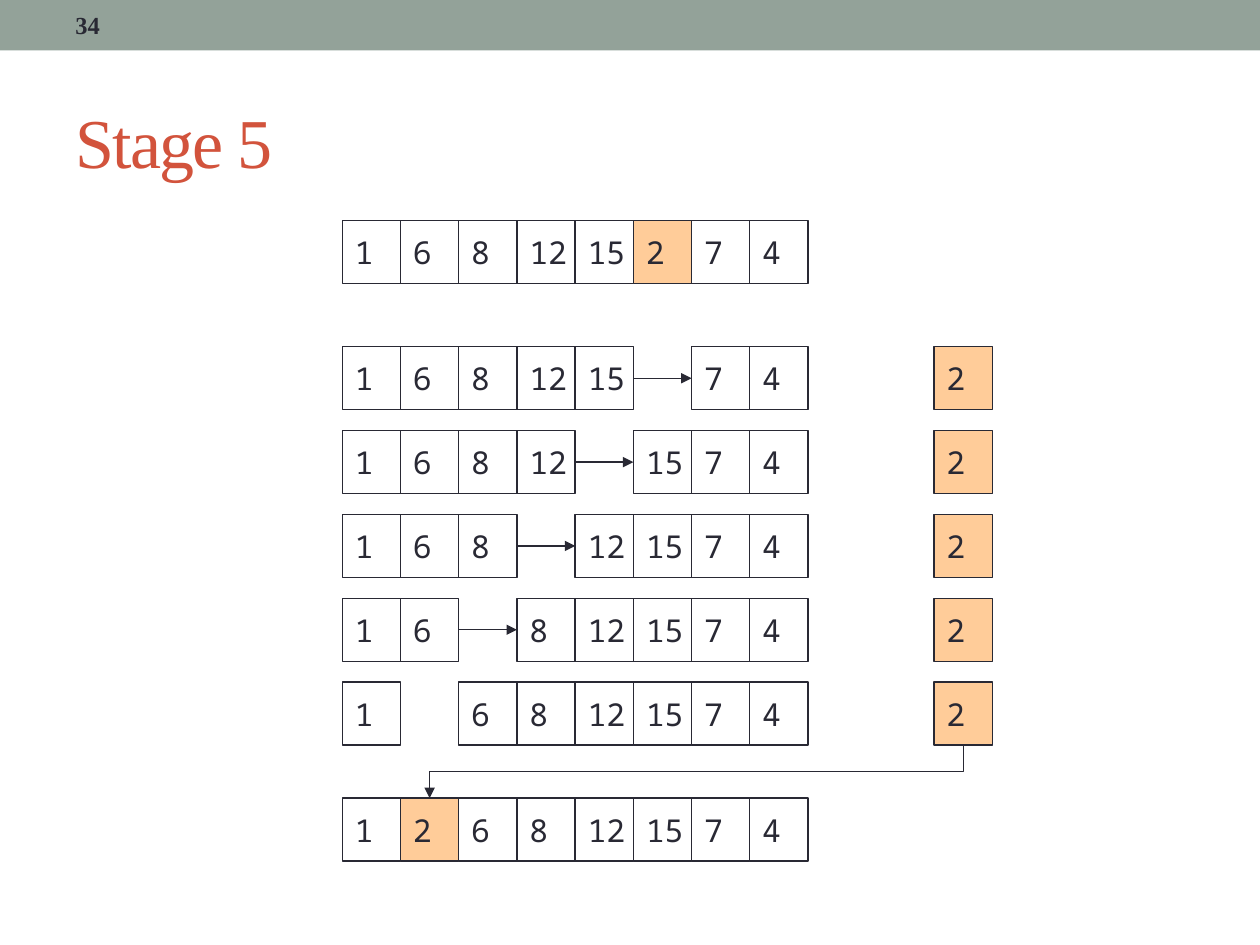
from lxml import etree
from pptx import Presentation
from pptx.dml.color import RGBColor
from pptx.enum.shapes import MSO_CONNECTOR as Connector, MSO_SHAPE as Shape
from pptx.enum.text import MSO_ANCHOR as Anchor, MSO_AUTO_SIZE as AutoSize, PP_ALIGN as Align
from pptx.oxml.ns import qn
from pptx.util import Cm, Pt

COLORS = {"bar": "93A299", "ink": "292934", "title": "D2533C", "key": "FFCC99"}
SERIF, MONO = "Times New Roman", "Noto Sans Mono"

VALUES = [1, 6, 8, 12, 15, 2, 7, 4]
KEY, KEY_INDEX, FINAL_INDEX = 2, 5, 1
ARRAY_LEFT, KEY_LEFT = 6.9, 18.83
CELL_WIDTH, CELL_HEIGHT = 9.39 / len(VALUES), 1.27
START_TOP, SHIFT_TOP, SHIFT_STEP, RESULT_TOP = 4.45, 6.99, 1.69, 16.09

presentation = Presentation()
presentation.slide_width, presentation.slide_height = Cm(25.4), Cm(19.05)
slide = presentation.slides.add_slide(presentation.slide_layouts[5])


def add_cell(value, left, top):
    cell = slide.shapes.add_shape(
        Shape.RECTANGLE, Cm(left), Cm(top), Cm(CELL_WIDTH), Cm(CELL_HEIGHT))
    cell.shadow.inherit = False
    if value == KEY:
        cell.fill.solid()
        cell.fill.fore_color.rgb = RGBColor.from_string(COLORS["key"])
    else:
        cell.fill.background()
    cell.line.color.rgb = RGBColor.from_string(COLORS["ink"])
    cell.line.width = Pt(0.75)
    frame = cell.text_frame
    frame.word_wrap = False
    frame.vertical_anchor = Anchor.MIDDLE
    paragraph = frame.paragraphs[0]
    paragraph.text = str(value)
    paragraph.alignment = Align.LEFT
    paragraph.font.name, paragraph.font.size = MONO, Pt(18)
    paragraph.font.color.rgb = RGBColor.from_string(COLORS["ink"])
    return cell


def add_arrow(kind, left, top, right, bottom):
    arrow = slide.shapes.add_connector(kind, Cm(left), Cm(top), Cm(right), Cm(bottom))
    arrow.line.color.rgb = RGBColor.from_string(COLORS["ink"])
    arrow.line.width = Pt(0.75)
    etree.SubElement(arrow.line._get_or_add_ln(), qn("a:tailEnd"), type="triangle")
    etree.SubElement(arrow._element.spPr, qn("a:effectLst"))
    return arrow


# Header bar and slide number
bar = slide.shapes.add_shape(Shape.RECTANGLE, 0, 0, presentation.slide_width, Cm(1.02))
bar.shadow.inherit = False
bar.fill.solid()
bar.fill.fore_color.rgb = RGBColor.from_string(COLORS["bar"])
bar.line.fill.background()

number = slide.shapes.add_textbox(Cm(1.27), Cm(0.05), Cm(8.05), Cm(0.91))
number.text_frame.word_wrap = True
number.text_frame.vertical_anchor = Anchor.MIDDLE
paragraph = number.text_frame.paragraphs[0]
paragraph.text = "34"
paragraph.font.name, paragraph.font.size, paragraph.font.bold = SERIF, Pt(14), True
paragraph.font.color.rgb = RGBColor.from_string(COLORS["ink"])

# Title
title = slide.shapes.title
title.left, title.top, title.width, title.height = Cm(1.27), Cm(1.47), Cm(22.86), Cm(2.74)
title.text_frame.auto_size = AutoSize.NONE
title.text_frame.vertical_anchor = Anchor.MIDDLE
paragraph = title.text_frame.paragraphs[0]
paragraph.text = "Stage 5"
paragraph.alignment = Align.LEFT
paragraph.font.name, paragraph.font.size = SERIF, Pt(40)
paragraph.font.color.rgb = RGBColor.from_string(COLORS["title"])
paragraph.runs[0].font._element.set("spc", "-100")

# Array before the stage and after it
others = [value for value in VALUES if value != KEY]
result = others[:FINAL_INDEX] + [KEY] + others[FINAL_INDEX:]
for values, top in ((VALUES, START_TOP), (result, RESULT_TOP)):
    for column, value in enumerate(values):
        add_cell(value, ARRAY_LEFT + column * CELL_WIDTH, top)

# Shifts: the gap moves left one column per row, with the key held aside
for step, gap in enumerate(range(KEY_INDEX, FINAL_INDEX - 1, -1)):
    top = SHIFT_TOP + step * SHIFT_STEP
    cells = {}
    for index, value in enumerate(others):
        column = index if index < gap else index + 1
        cells[column] = add_cell(value, ARRAY_LEFT + column * CELL_WIDTH, top)
    add_cell(KEY, KEY_LEFT, top)
    if gap > FINAL_INDEX:
        left, middle = ARRAY_LEFT + gap * CELL_WIDTH, top + CELL_HEIGHT / 2
        arrow = add_arrow(Connector.STRAIGHT, left, middle, left + CELL_WIDTH, middle)
        arrow.begin_connect(cells[gap - 1], 3)
        arrow.end_connect(cells[gap + 1], 1)

# Key drops into its final place: an elbow turned by 90 degrees about its centre
start_x, start_y = KEY_LEFT + CELL_WIDTH / 2, top + CELL_HEIGHT
end_x, end_y = ARRAY_LEFT + (FINAL_INDEX + 0.5) * CELL_WIDTH, RESULT_TOP
center_x, center_y = (start_x + end_x) / 2, (start_y + end_y) / 2
half_width, half_height = (end_y - start_y) / 2, (start_x - end_x) / 2
elbow = add_arrow(Connector.ELBOW, center_x - half_width, center_y - half_height,
                  center_x + half_width, center_y + half_height)
elbow._element.spPr.find(qn("a:xfrm")).set("rot", str(90 * 60000))

presentation.save("out.pptx")
